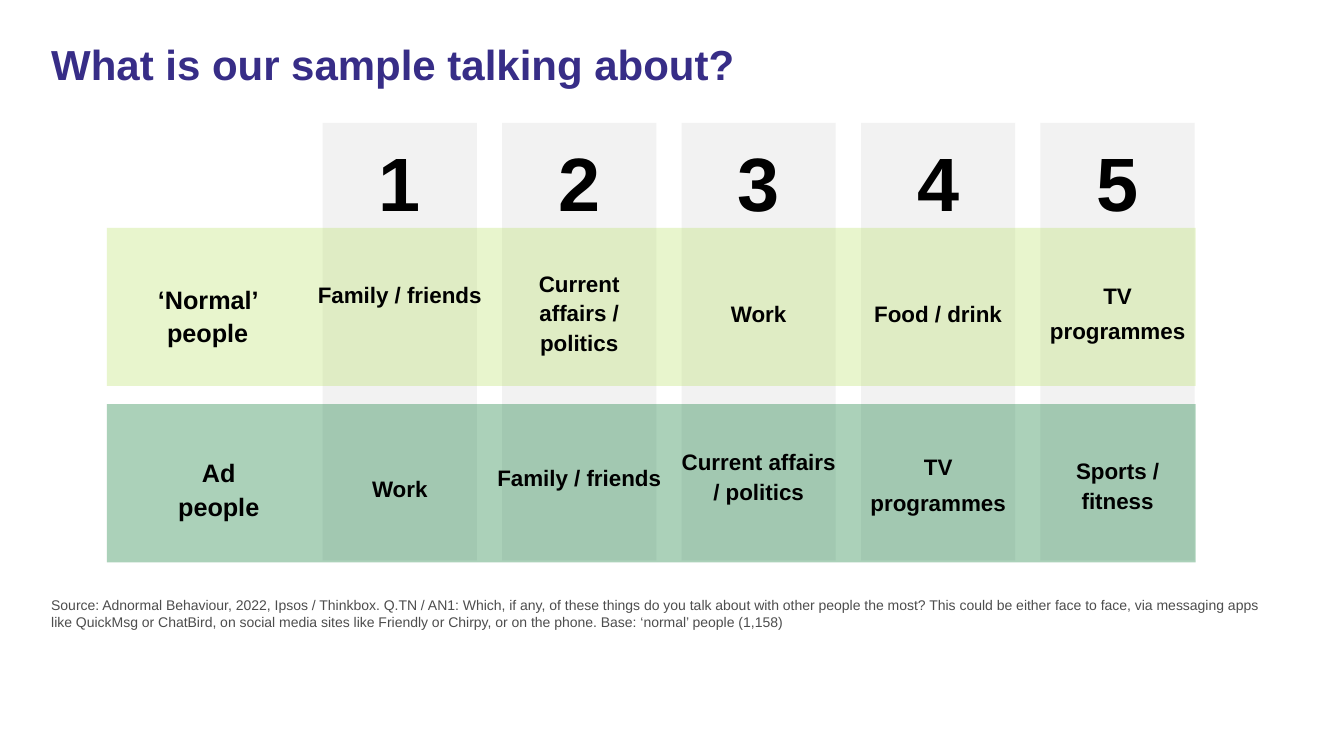
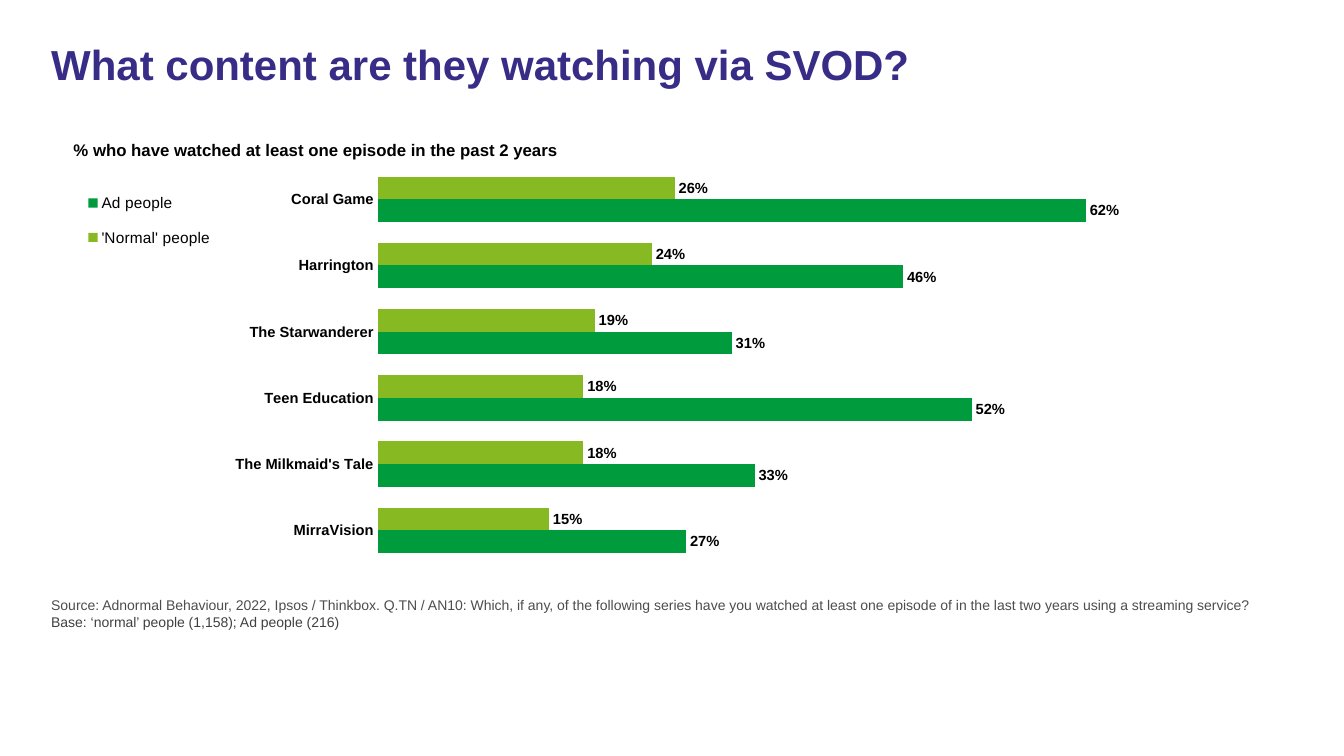
import pptx
import pptx.chart.data
import pptx.dml.color
import pptx.enum.chart
import pptx.enum.shapes
import pptx.enum.text
import pptx.oxml
import pptx.oxml.ns
import pptx.util
from pptx.util import Inches

FONT = "Arial"
TITLE, BLACK, GREY, DARK_GREY = "372D87", "000000", "4D4D4D", "404040"
CENTER = pptx.enum.text.PP_ALIGN.CENTER
LEFT = pptx.enum.text.PP_ALIGN.LEFT


def colour(target, value):
    """Give a font or a fill the solid colour with this hex value."""
    if hasattr(target, "solid"):
        target.solid()
        target.fore_color.rgb = pptx.dml.color.RGBColor.from_string(value)
    else:
        target.color.rgb = pptx.dml.color.RGBColor.from_string(value)


def add_text(page, at, lines, size, colours=(BLACK,), bold=False, align=LEFT,
             margins=(0, 0), spacing=1.0, gap=0):
    """Add a text box with one paragraph per line; colours are used in turn."""
    box = page.shapes.add_textbox(*[Inches(length) for length in at])
    frame = box.text_frame
    frame.word_wrap = True
    frame.margin_left = frame.margin_right = Inches(margins[0])
    frame.margin_top = frame.margin_bottom = Inches(margins[1])
    for i, line in enumerate(lines):
        para = frame.paragraphs[0] if i == 0 else frame.add_paragraph()
        para.alignment = align
        para.line_spacing = spacing
        if i:
            para.space_before = pptx.util.Pt(gap)
        span = para.add_run()
        span.text = line
        span.font.name = FONT
        span.font.size = pptx.util.Pt(size)
        span.font.bold = bold
        colour(span.font, colours[i % len(colours)])


deck = pptx.Presentation()
deck.slide_width = Inches(13.33)
deck.slide_height = Inches(7.5)

# Title and source note of each slide
slide_texts = [
    ("What is our sample talking about?", [
        "Source: Adnormal Behaviour, 2022, Ipsos / Thinkbox. Q.TN / AN1: Which, if any, of "
        "these things do you talk about with other people the most? This could be either "
        "face to face, via messaging apps like QuickMsg or ChatBird, on social media sites "
        "like Friendly or Chirpy, or on the phone. Base: ‘normal’ people (1,158)"]),
    ("What content are they watching via SVOD?", [
        "Source: Adnormal Behaviour, 2022, Ipsos / Thinkbox. Q.TN / AN10: Which, if any, of "
        "the following series have you watched at least one episode of in the last two years "
        "using a streaming service?",
        "Base: ‘normal’ people (1,158); Ad people (216)"]),
]
pages = []
for title, source in slide_texts:
    page = deck.slides.add_slide(deck.slide_layouts[6])
    add_text(page, (0.41, 0.39, 12.4, 1.12), [title], 30, (TITLE,), bold=True,
             margins=(0.1, 0.05), spacing=0.9)
    add_text(page, (0.41, 5.87, 12.4, 0.33), source, 10, (GREY, DARK_GREY),
             margins=(0.1, 0.05))
    pages.append(page)
topics_page, series_page = pages

# Slide 1: ranked topics, grey rank columns under translucent group bands
COLUMN_WIDTH = 1.53
column_lefts = [3.2 + 1.78 * i for i in range(5)]
panels = [(left, 1.22, COLUMN_WIDTH, 4.34, "F2F2F2", 100) for left in column_lefts]
panels += [(1.06, 2.26, 10.8, 1.57, "BCE36D", 34), (1.06, 4.01, 10.8, 1.57, "00742D", 33)]
for left, top, width, height, fill, opacity in panels:
    panel = topics_page.shapes.add_shape(
        pptx.enum.shapes.MSO_SHAPE.RECTANGLE,
        Inches(left), Inches(top), Inches(width), Inches(height))
    panel.shadow.inherit = False
    colour(panel.fill, fill)
    panel.line.fill.background()
    if opacity < 100:
        rgb = panel.element.find(".//" + pptx.oxml.ns.qn("a:srgbClr"))
        alpha = pptx.oxml.parse_xml(
            f'<a:alpha {pptx.oxml.ns.nsdecls("a")} val="{opacity * 1000}"/>')
        rgb.append(alpha)

# Each topic: lines, top, width; the width sets where the text wraps
normal_topics = [
    (["Family / friends"], 2.76, 1.74),
    (["Current affairs / politics"], 2.65, 1.4),
    (["Work"], 2.95, 1.63),
    (["Food / drink"], 2.95, 1.63),
    (["TV", "programmes"], 2.8, 1.74),
]
ad_topics = [
    (["Work"], 4.69, 1.63),
    (["Family / friends"], 4.58, 1.74),
    (["Current affairs / politics"], 4.42, 1.57),
    (["TV", "programmes"], 4.5, 1.74),
    (["Sports / fitness"], 4.51, 1.4),
]
for i, left in enumerate(column_lefts):
    center = left + COLUMN_WIDTH / 2
    add_text(topics_page, (center - 0.6, 1.26, 1.2, 0.92), [str(i + 1)], 54, bold=True,
             align=CENTER, spacing=1.1)
    for lines, top, width in (normal_topics[i], ad_topics[i]):
        add_text(topics_page, (center - width / 2, top, width, 0.6), lines, 16, bold=True,
                 align=CENTER, spacing=1.1 if len(lines) == 1 else 1.0, gap=6)

for group, left, top, width in (("‘Normal’ people", 1.41, 2.79, 1.3),
                                ("Ad people", 1.72, 4.51, 0.9)):
    add_text(topics_page, (left, top, width, 0.64), [group], 18, bold=True,
             align=CENTER, spacing=1.1)

# Slide 2: series watched
add_text(series_page, (0.63, 1.34, 10.22, 0.34),
         ["% who have watched at least one episode in the past 2 years"], 12, bold=True,
         margins=(0.1, 0.05))

chart_data = pptx.chart.data.CategoryChartData(number_format="0%")
chart_data.categories = ["Coral Game", "Harrington", "The Starwanderer", "Teen Education",
                         "The Milkmaid's Tale", "MirraVision"]
chart_data.add_series("'Normal' people", (0.26, 0.24, 0.19, 0.18, 0.18, 0.15))
chart_data.add_series("Ad people", (0.62, 0.46, 0.31, 0.52, 0.33, 0.27))
chart = series_page.shapes.add_chart(
    pptx.enum.chart.XL_CHART_TYPE.BAR_CLUSTERED,
    Inches(0.36), Inches(1.51), Inches(12.45), Inches(4.22), chart_data).chart
chart.has_title = False
chart.font.name = FONT
chart.font.size = pptx.util.Pt(18)
colour(chart.font, BLACK)

category_axis = chart.category_axis
category_axis.reverse_order = True
category_axis.major_tick_mark = pptx.enum.chart.XL_TICK_MARK.NONE
category_axis.format.line.fill.background()
value_axis = chart.value_axis
value_axis.minimum_scale = 0
value_axis.maximum_scale = 0.8
value_axis.has_major_gridlines = False
value_axis.visible = False

plot = chart.plots[0]
plot.gap_width = 92
plot.overlap = 0
plot.vary_by_categories = False
label_fonts = [category_axis.tick_labels.font]
for series, fill in zip(plot.series, ("87B923", "009B3C")):
    colour(series.format.fill, fill)
    series.invert_if_negative = False
    labels = series.data_labels
    labels.show_value = True
    labels.number_format = "0%"
    labels.number_format_is_linked = False
    labels.position = pptx.enum.chart.XL_LABEL_POSITION.OUTSIDE_END
    label_fonts.append(labels.font)
for font in label_fonts:
    font.name = FONT
    font.size = pptx.util.Pt(10.5)
    font.bold = True
    colour(font, BLACK)

chart.has_legend = True
legend = chart.legend
legend.position = pptx.enum.chart.XL_LEGEND_POSITION.RIGHT
legend.include_in_layout = False
legend.font.name = FONT
legend.font.size = pptx.util.Pt(11)
colour(legend.font, BLACK)

# Manual places of plot and legend, as shares of the chart area
plot_area = chart.element.find(".//" + pptx.oxml.ns.qn("c:plotArea"))
legend_area = chart.element.find(".//" + pptx.oxml.ns.qn("c:legend"))
for area, index, target, bounds in (
        (plot_area, 0, '<c:layoutTarget val="inner"/>', (0.272, 0.033, 0.728, 0.934)),
        (legend_area, 1, "", (0.03, 0.06, 0.12, 0.2))):
    for old_layout in area.findall(pptx.oxml.ns.qn("c:layout")):
        area.remove(old_layout)
    modes = '<c:xMode val="edge"/><c:yMode val="edge"/>'
    sizes = "".join(f'<c:{name} val="{share}"/>' for name, share in zip("xywh", bounds))
    area.insert(index, pptx.oxml.parse_xml(
        f'<c:layout {pptx.oxml.ns.nsdecls("c")}><c:manualLayout>'
        f'{target}{modes}{sizes}</c:manualLayout></c:layout>'))

deck.save("out.pptx")
